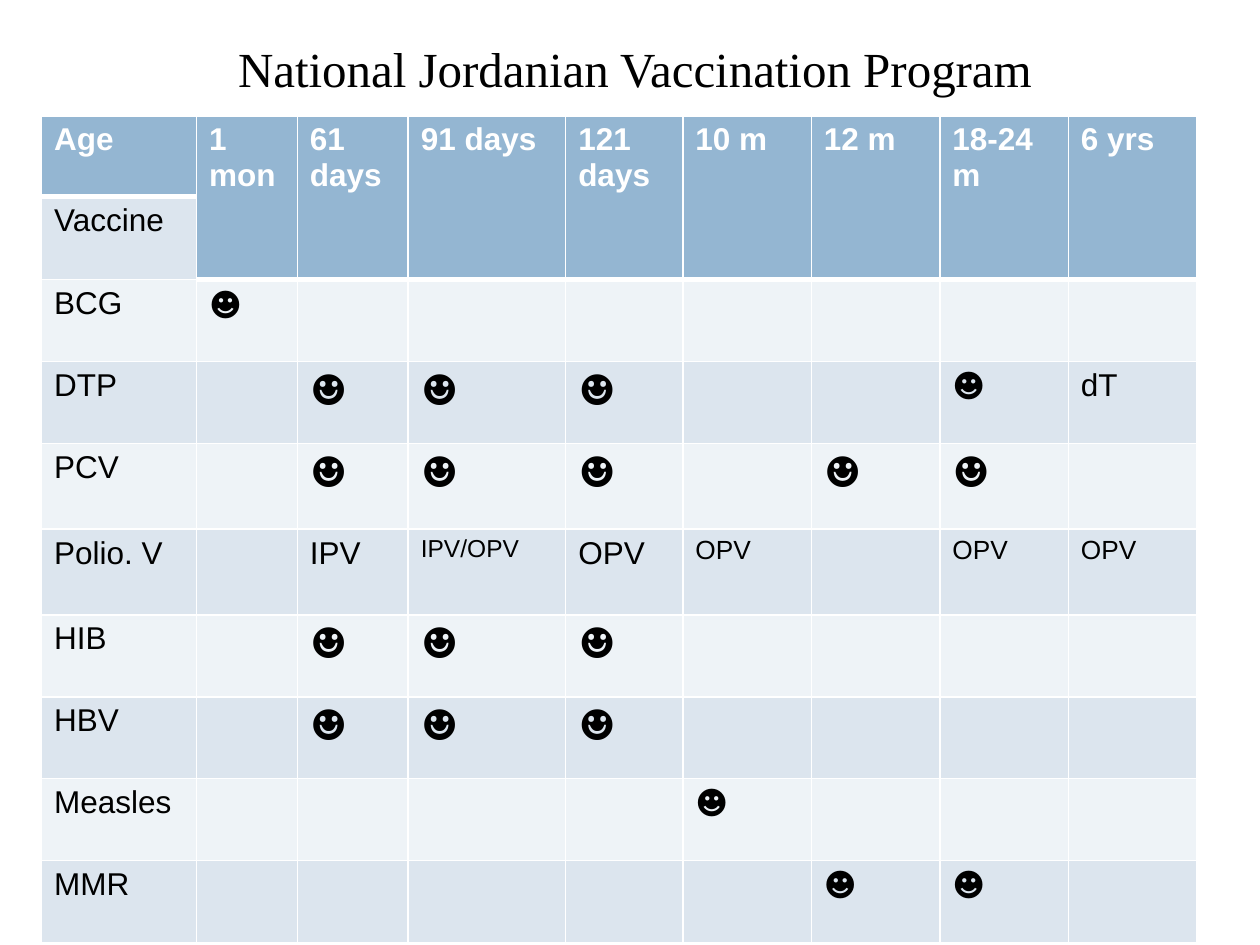
from lxml import etree
from pptx import Presentation
from pptx.dml.color import RGBColor
from pptx.enum.text import MSO_ANCHOR, PP_ALIGN
from pptx.oxml.ns import qn
from pptx.util import Pt

CENTER = PP_ALIGN.CENTER
MIDDLE = MSO_ANCHOR.MIDDLE
HUES = {"head": "94B6D2", "dark": "DCE5EE", "light": "EEF3F7",
        "white": "FFFFFF", "black": "000000"}

WIDTHS = [88.56, 57.6, 63.36, 90, 66.96] + [73.44] * 4
HEIGHTS = [46.08] * 2 + [46.8] * 2 + [48.96] * 2 + [46.8] * 4
HEADS = ["Age", "1 mon", "61 days", "91 days", "121 days",
         "10 m", "12 m", "18-24 m", "6 yrs"]

SMALL = ("☻", 18, "Calibri")
LARGE = ("☻", 24, "Cambria")
OPV = ("OPV", 15, "Arial")
TRIO = {2: LARGE, 3: LARGE, 4: LARGE}
DOSES = {
    "Vaccine": {},
    "BCG": {1: SMALL},
    "DTP": {**TRIO, 7: SMALL, 8: ("dT", 18, "Arial")},
    "PCV": {**TRIO, 6: LARGE, 7: LARGE},
    "Polio. V": {2: ("IPV", 18, "Arial"), 3: ("IPV/OPV", 14, "Arial"),
                 4: ("OPV", 18, "Arial"), 5: OPV, 7: OPV, 8: OPV},
    "HIB": TRIO,
    "HBV": TRIO,
    "Measles": {5: SMALL},
    "MMR": {6: SMALL, 7: SMALL},
}


def write(frame, text, size, face, hue, bold=False):
    run = frame.paragraphs[0].add_run()
    run.text = text
    form = {"size": Pt(size), "name": face, "bold": bold}
    for key, value in form.items():
        setattr(run.font, key, value)
    run.font.color.rgb = RGBColor.from_string(HUES[hue])


def paint(cell, hue, base):
    cell.fill.solid()
    cell.fill.fore_color.rgb = RGBColor.from_string(HUES[hue])
    props = cell._tc.get_or_add_tcPr()
    for spot, (side, width) in enumerate(zip("LRTB", (1, 1, 1, base))):
        line = etree.Element(qn("a:ln" + side), w=str(Pt(width)))
        fill = etree.SubElement(line, qn("a:solidFill"))
        etree.SubElement(fill, qn("a:srgbClr"), val=HUES["white"])
        props.insert(spot, line)


deck = Presentation()
deck.slide_width, deck.slide_height = Pt(720), Pt(540)
slide = deck.slides.add_slide(deck.slide_layouts[5])

title = slide.shapes.title
place = {"left": 23.76, "top": 18, "width": 678.24, "height": 41.04}
for key, value in place.items():
    setattr(title, key, Pt(value))
frame = title.text_frame
frame.word_wrap = True
frame.vertical_anchor = MIDDLE
frame.paragraphs[0].alignment = CENTER
write(frame, "National Jordanian Vaccination Program", 28,
      "Times New Roman", "black")

grid = slide.shapes.add_table(
    len(HEIGHTS), len(WIDTHS), Pt(23.76), Pt(66.24),
    Pt(sum(WIDTHS)), Pt(sum(HEIGHTS))).table
for col, width in zip(grid.columns, WIDTHS):
    col.width = Pt(width)
for row, height in zip(grid.rows, HEIGHTS):
    row.height = Pt(height)

for c, text in enumerate(HEADS):
    write(grid.cell(0, c).text_frame, text, 18, "Arial", "white", True)
    paint(grid.cell(0, c), "head", 3)

for r, (name, doses) in enumerate(DOSES.items(), 1):
    band = "dark" if r % 2 else "light"
    for c, mark in {0: (name, 18, "Arial"), **doses}.items():
        write(grid.cell(r, c).text_frame, *mark, "black")
    for c in range(len(HEADS)):
        joint = r == 1 and c > 0
        paint(grid.cell(r, c), "head" if joint else band, 3 if joint else 1)

for c in range(1, len(HEADS)):
    grid.cell(0, c).merge(grid.cell(1, c))

deck.save("out.pptx")
